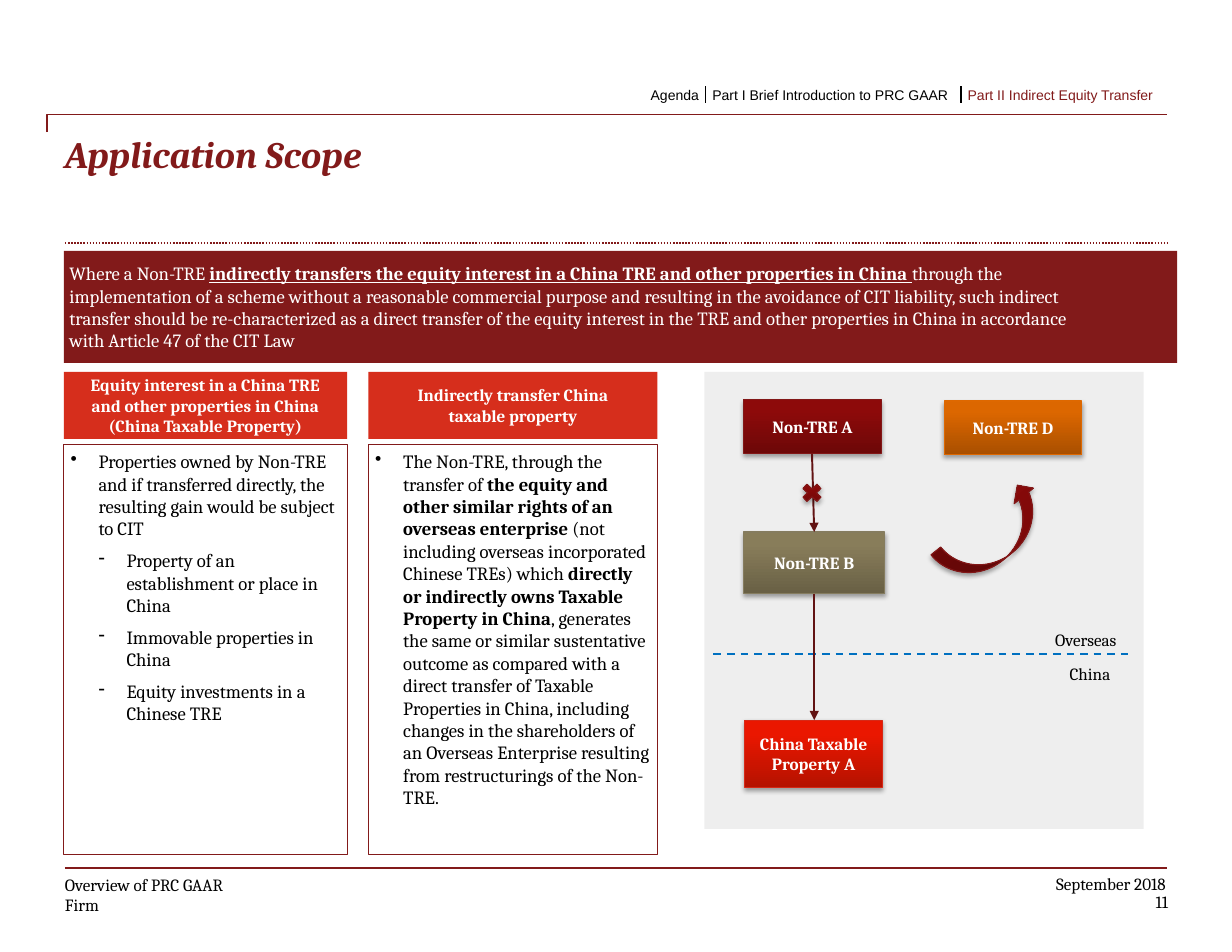
from lxml.etree import SubElement
from pptx import Presentation
from pptx.dml.color import RGBColor
from pptx.enum.dml import MSO_LINE
from pptx.enum.shapes import MSO_CONNECTOR, MSO_SHAPE
from pptx.enum.text import MSO_ANCHOR, MSO_AUTO_SIZE, PP_ALIGN
from pptx.oxml.ns import qn
from pptx.util import Inches, Pt

MAROON, RED, BLACK, WHITE = "821A1A", "D62E1C", "000000", "FFFFFF"
DARK = ("6D0808", "8D0A0A", "821717")
ORANGE = ("A94F00", "DC6700", "DE6800")
OLIVE = ("696045", "887D5A", "857C5F")
SCARLET = ("B51200", "EA1700", "D62917")
LEFT, CENTER, RIGHT = PP_ALIGN.LEFT, PP_ALIGN.CENTER, PP_ALIGN.RIGHT
BULLETS = {1: ("•", 0.26), 2: ("-", 0.51)}


def rgb(value):
    return RGBColor.from_string(value)


class Deck:
    """Holds the style and the current slide, and draws each kind of element."""

    def __init__(self, width, height, font="Cambria"):
        self.prs = Presentation()
        self.prs.slide_width, self.prs.slide_height = Inches(width), Inches(height)
        self.font = font
        self.s = self.prs.slides.add_slide(self.prs.slide_layouts[5])

    def run(self, p, text, size, color, bold=False, italic=False, underline=False, font=None):
        r = p.add_run()
        r.text = text
        f = r.font
        f.name, f.size, f.color.rgb = font or self.font, Pt(size), rgb(color)
        f.bold, f.italic, f.underline = bold, italic, underline

    def frame(self, sp, inset=0.0, wrap=True, anchor=MSO_ANCHOR.TOP, inset_y=None):
        tf = sp.text_frame
        tf.word_wrap, tf.vertical_anchor = wrap, anchor
        tf.auto_size = MSO_AUTO_SIZE.NONE
        tf.margin_left = tf.margin_right = Inches(inset)
        tf.margin_top = tf.margin_bottom = Inches(inset if inset_y is None else inset_y)
        return tf

    def paragraph(self, tf, align=LEFT):
        p = tf.paragraphs[0] if not tf.paragraphs[0].runs else tf.add_paragraph()
        p.alignment = align
        return p

    def title(self, text, x, y, w, h):
        sp = self.s.shapes.title
        sp.left, sp.top, sp.width, sp.height = map(Inches, (x, y, w, h))
        p = self.paragraph(self.frame(sp))
        self.run(p, text, 24, MAROON, bold=True, italic=True)

    def label(self, text, x, y, w, h, size=11, color=BLACK, align=LEFT, font=None,
              inset=0, spacing=None, wrap=False, anchor=MSO_ANCHOR.TOP):
        sp = self.s.shapes.add_textbox(*map(Inches, (x, y, w, h)))
        p = self.paragraph(self.frame(sp, inset, wrap, anchor, 0), align)
        if spacing:
            p.line_spacing = Pt(spacing)
        self.run(p, text, size, color, font=font)

    def shape(self, x, y, w, h, fill, line=None, kind=MSO_SHAPE.RECTANGLE, alpha=None):
        sp = self.s.shapes.add_shape(kind, *map(Inches, (x, y, w, h)))
        sp.shadow.inherit = False
        sp.fill.solid()
        sp.fill.fore_color.rgb = rgb(fill)
        if alpha:
            clr = sp.element.spPr.find(qn("a:solidFill"))[0]
            SubElement(clr, qn("a:alpha"), val=str(alpha * 1000))
        if line:
            sp.line.color.rgb, sp.line.width = rgb(line), Pt(0.75)
        else:
            sp.line.fill.background()
        return sp

    def glossy(self, x, y, w, h, colors, kind=MSO_SHAPE.RECTANGLE, text=None):
        low, high, edge = colors
        sp = self.shape(x, y, w, h, low, edge, kind)
        sp.fill.gradient()
        sp.fill.gradient_angle = 90
        for stop, color, pos in zip(sp.fill.gradient_stops, (low, high), (0, 0.8)):
            stop.color.rgb, stop.position = rgb(color), pos
        effects = sp.element.spPr.find(qn("a:effectLst"))
        shadow = SubElement(effects, qn("a:outerShdw"), blurRad=str(Pt(3.1)),
                            dist=str(Pt(1.8)), dir="5400000", rotWithShape="0")
        clr = SubElement(shadow, qn("a:srgbClr"), val=BLACK)
        SubElement(clr, qn("a:alpha"), val="35000")
        if text:
            tf = self.frame(sp, 0.1, anchor=MSO_ANCHOR.MIDDLE, inset_y=0.05)
            self.run(self.paragraph(tf, CENTER), text, 11, WHITE, bold=True)
        return sp

    def header(self, lines, x, y, w, h):
        sp = self.shape(x, y, w, h, RED)
        tf = self.frame(sp, 0.05, False, MSO_ANCHOR.MIDDLE)
        for text in lines:
            self.run(self.paragraph(tf, CENTER), text, 11, WHITE, bold=True)

    def banner(self, lines, x, y, w, h):
        sp = self.shape(x, y, w, h, MAROON)
        tf = self.frame(sp, 0.05, False, MSO_ANCHOR.MIDDLE)
        for runs in lines:
            p = self.paragraph(tf)
            for text, strong in runs:
                self.run(p, text, 12, WHITE, bold=strong, underline=strong)

    def bullets(self, items, x, y, w, h):
        tf = self.frame(self.shape(x, y, w, h, WHITE, MAROON), 0.05)
        for level, runs in items:
            p = self.paragraph(tf)
            p.level, p.space_after = level, Pt(6)
            char, indent = BULLETS[level]
            pPr = p._p.get_or_add_pPr()
            pPr.set("marL", str(Inches(indent)))
            pPr.set("indent", str(Inches(-0.25)))
            SubElement(SubElement(pPr, qn("a:buClr")), qn("a:srgbClr"), val=BLACK)
            SubElement(pPr, qn("a:buChar"), char=char)
            for text, strong in runs:
                self.run(p, text, 12, BLACK, bold=strong)

    def line(self, x1, y1, x2, y2, color=MAROON, width=0.75, dash=None, arrow=False,
             kind=MSO_CONNECTOR.STRAIGHT):
        c = self.s.shapes.add_connector(kind, *map(Inches, (x1, y1, x2, y2)))
        c.line.color.rgb, c.line.width = rgb(color), Pt(width)
        if dash:
            c.line.dash_style = dash
        if arrow:
            SubElement(c.line._get_or_add_ln(), qn("a:tailEnd"), type="triangle")
        spPr = c.element.spPr
        if kind == MSO_CONNECTOR.ELBOW:
            guides = spPr.find(qn("a:prstGeom")).find(qn("a:avLst"))
            SubElement(guides, qn("a:gd"), name="adj1", fmla="val 0")
        SubElement(spPr, qn("a:effectLst"))


def main():
    d = Deck(11, 8.5)
    x1, x2 = 0.58, 10.42

    d.label("Firm", x1, 8.03, 0.3, 0.14, spacing=10)
    d.label("September 2018", 9.3, 7.8, 1.11, 0.19, align=RIGHT)
    d.label("11", 10.08, 8, 0.35, 0.17, align=RIGHT, spacing=10)
    d.label("Overview of PRC GAAR", x1, 7.8, 3.17, 0.19, wrap=True, anchor=MSO_ANCHOR.BOTTOM)
    d.line(x1, 7.75, x2, 7.75)
    d.line(x1, 2.17, x2, 2.17, width=1, dash=MSO_LINE.ROUND_DOT)
    d.line(0.42, 1.18, x2, 1.02, kind=MSO_CONNECTOR.ELBOW)
    d.title("Application Scope", x1, 1.17, 9.84, 0.92)

    for text, x, w, color in (("Agenda", 5.78, 0.5, BLACK),
                              ("Part I Brief Introduction to PRC GAAR", 6.33, 2.22, BLACK),
                              ("Part II Indirect Equity Transfer", 8.61, 1.81, MAROON)):
        d.label(text, x, 0.77, w, 0.15, 9, color, font="Arial", inset=0.03)
    for x in (6.3, 8.58):
        d.line(x, 0.77, x, 0.92, BLACK, 1)

    d.banner([
        [("Where a Non-TRE ", False),
         ("indirectly transfers the equity interest in a China TRE and other properties in China ", True),
         ("through the", False)],
        [("implementation of a scheme without a reasonable commercial purpose and resulting in "
          "the avoidance of CIT liability, such indirect", False)],
        [("transfer should be re-characterized as a direct transfer of the equity interest in "
          "the TRE and other properties in China in accordance", False)],
        [("with Article 47 of the CIT Law", False)],
    ], 0.57, 2.24, 9.94, 1)

    columns = (
        (0.57, 2.53,
         ("Equity interest in a China TRE", "and other properties in China", "(China Taxable Property)"),
         [(1, [("Properties owned by Non-TRE and if transferred directly, the resulting gain "
                "would be subject to CIT", False)]),
          (2, [("Property of an establishment or place in China", False)]),
          (2, [("Immovable properties in China", False)]),
          (2, [("Equity investments in a Chinese TRE", False)])]),
        (3.29, 2.58,
         ("Indirectly transfer China", "taxable property"),
         [(1, [("The Non-TRE, through the transfer of ", False),
               ("the equity and other similar rights of an overseas enterprise", True),
               (" (not including overseas incorporated Chinese TREs) which ", False),
               ("directly or indirectly owns Taxable Property in China", True),
               (", generates the same or similar sustentative outcome as compared with a direct "
                "transfer of Taxable Properties in China, including changes in the shareholders "
                "of an Overseas Enterprise resulting from restructurings of the Non-TRE.", False)])]),
    )
    for x, w, heading, items in columns:
        d.header(heading, x, 3.32, w, 0.6)
        d.bullets(items, x, 3.97, w, 3.66)

    d.shape(6.29, 3.32, 3.92, 4.08, "D9D9D9", alpha=43)
    for text, x, y, w, h, colors in (("Non-TRE A", 6.64, 3.57, 1.23, 0.48, DARK),
                                     ("Non-TRE D", 8.43, 3.58, 1.23, 0.48, ORANGE),
                                     ("Non-TRE B", 6.64, 4.75, 1.26, 0.55, OLIVE),
                                     ("China Taxable Property A", 6.65, 6.43, 1.23, 0.6, SCARLET)):
        d.glossy(x, y, w, h, colors, text=text)
    d.line(6.37, 5.84, 10.07, 5.84, "0070C0", 1.25, MSO_LINE.DASH)
    d.line(7.25, 4.05, 7.27, 4.75, "621313", 1.25, arrow=True)
    d.line(7.27, 5.3, 7.27, 6.43, "621313", 1.25, arrow=True)
    d.glossy(8.33, 4.56, 1.1, 0.44, DARK, MSO_SHAPE.CURVED_UP_ARROW).rotation = 321.1
    d.glossy(7.13, 4.29, 0.24, 0.22, DARK, MSO_SHAPE.MATH_MULTIPLY)
    d.label("Overseas", 9.42, 5.62, 0.62, 0.19)
    d.label("China", 9.55, 5.92, 0.52, 0.19)

    d.prs.save("out.pptx")


if __name__ == "__main__":
    main()
